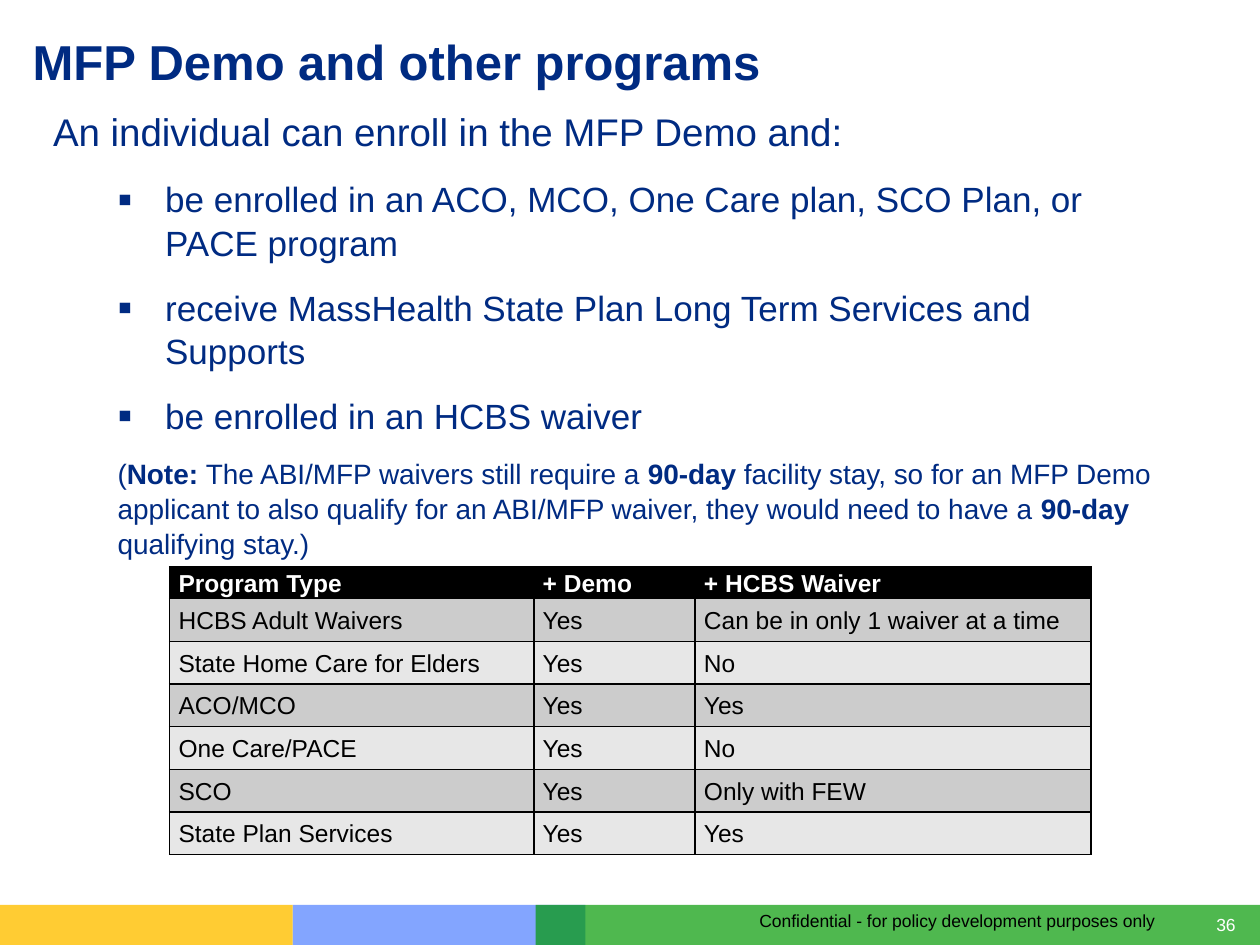
from dataclasses import dataclass

from lxml.etree import SubElement
from pptx import Presentation
from pptx.dml.color import RGBColor
from pptx.enum.shapes import MSO_SHAPE
from pptx.enum.text import MSO_ANCHOR, PP_ALIGN
from pptx.oxml.ns import qn
from pptx.slide import Slide
from pptx.util import Cm, Pt

NAVY = RGBColor(0x00, 0x2B, 0x82)
BLACK = RGBColor(0x00, 0x00, 0x00)
WHITE = RGBColor(0xFF, 0xFF, 0xFF)
DARK_BAND = RGBColor(0xCC, 0xCC, 0xCC)
LIGHT_BAND = RGBColor(0xE7, 0xE7, 0xE7)
BLUE = RGBColor(0x5E, 0x8B, 0xFF)
YELLOW = RGBColor(0xFF, 0xC0, 0x00)
GREEN = RGBColor(0x00, 0x99, 0x00)

BULLETS = [
    "be\u00a0enrolled in an ACO, MCO, One Care plan, SCO Plan, or PACE program".replace("\u00a0", " "),
    "receive MassHealth State Plan Long Term Services and Supports",
    "be enrolled in an HCBS waiver",
]
NOTE = [
    ("(", False),
    ("Note: ", True),
    ("The ABI/MFP waivers still require a ", False),
    ("90-day ", True),
    ("facility stay, so for an MFP Demo applicant to also qualify for an "
     "ABI/MFP waiver, they would need to have a ", False),
    ("90-day", True),
    (" qualifying stay.)", False),
]
PROGRAMS = [
    ("Program Type", "+ Demo", "+ HCBS Waiver"),
    ("HCBS Adult Waivers", "Yes", "Can be in only 1 waiver at a time"),
    ("State Home Care for Elders", "Yes", "No"),
    ("ACO/MCO", "Yes", "Yes"),
    ("One Care/PACE", "Yes", "No"),
    ("SCO", "Yes", "Only with FEW"),
    ("State Plan Services", "Yes", "Yes"),
]


@dataclass
class SlideBuilder:
    """Holds the style and the current slide, and adds each kind of element."""

    slide: Slide
    font_name: str = "Arial"
    body_line_spacing: float = 1.04
    table_line_spacing: float = 1.07

    def set_font(self, paragraph, size, color, bold=None):
        font = paragraph.font
        font.name = self.font_name
        font.size = Pt(size)
        font.color.rgb = color
        font.bold = bold

    def band(self, left, width, color, opacity):
        shape = self.slide.shapes.add_shape(
            MSO_SHAPE.RECTANGLE, Cm(left), Cm(18.24), Cm(width), Cm(0.81))
        shape.shadow.inherit = False
        shape.fill.solid()
        shape.fill.fore_color.rgb = color
        shape.line.fill.background()
        color_element = shape.fill._xPr.find(".//" + qn("a:srgbClr"))
        SubElement(color_element, qn("a:alpha"), val=str(opacity * 1000))

    def text_frame(self, left, top, width, height, margins=(0, 0)):
        shape = self.slide.shapes.add_textbox(Cm(left), Cm(top), Cm(width), Cm(height))
        frame = shape.text_frame
        frame.word_wrap = True
        frame.margin_left = frame.margin_right = Cm(margins[0])
        frame.margin_top = frame.margin_bottom = Cm(margins[1])
        return frame

    def label(self, box, text, size, color, bold=None, margins=(0, 0), align=PP_ALIGN.LEFT):
        paragraph = self.text_frame(*box, margins).paragraphs[0]
        paragraph.text = text
        paragraph.alignment = align
        self.set_font(paragraph, size, color, bold)

    def body_paragraph(self, paragraph, runs, size, left=0, hanging=0, before=True):
        for text, bold in runs:
            run = paragraph.add_run()
            run.text = text
            if bold:
                run.font.bold = True
        paragraph.line_spacing = self.body_line_spacing
        paragraph.space_before = Pt(size * 0.3 if before else 0)
        paragraph.space_after = Pt(size * 0.3)
        properties = paragraph._p.get_or_add_pPr()
        properties.set("marL", str(Cm(left)))
        properties.set("indent", str(-Cm(hanging)))
        if hanging:
            bullet_color = SubElement(properties, qn("a:buClr"))
            SubElement(bullet_color, qn("a:srgbClr"), val=str(NAVY))
            SubElement(properties, qn("a:buSzPct"), val="120000")
            SubElement(properties, qn("a:buFont"), typeface=self.font_name)
            SubElement(properties, qn("a:buChar"), char="▪")
        self.set_font(paragraph, size, NAVY)

    def body(self, box, heading, bullets, note):
        frame = self.text_frame(*box)
        self.body_paragraph(frame.paragraphs[0], [(heading, False)], 22, before=False)
        for bullet in bullets:
            self.body_paragraph(
                frame.add_paragraph(), [(bullet, False)], 20, left=2.26, hanging=0.96)
        self.body_paragraph(frame.add_paragraph(), note, 16, left=1.3)

    def cell(self, cell, text, fill, color, bold):
        cell.fill.solid()
        cell.fill.fore_color.rgb = fill
        cell.vertical_anchor = MSO_ANCHOR.MIDDLE
        cell.margin_left = cell.margin_right = Cm(0.18)
        cell.margin_top = cell.margin_bottom = 0
        paragraph = cell.text_frame.paragraphs[0]
        paragraph.text = text
        paragraph.line_spacing = self.table_line_spacing
        self.set_font(paragraph, 14, color, bold)
        properties = cell._tc.get_or_add_tcPr()
        for position, side in enumerate(("lnL", "lnR", "lnT", "lnB")):
            border = SubElement(properties, qn("a:" + side), w=str(Pt(1)))
            line_fill = SubElement(border, qn("a:solidFill"))
            SubElement(line_fill, qn("a:srgbClr"), val=str(BLACK))
            properties.insert(position, border)

    def table(self, left, top, widths, heights, rows):
        table = self.slide.shapes.add_table(
            len(rows), len(widths), Cm(left), Cm(top),
            Cm(sum(widths)), Cm(sum(heights))).table
        for column, width in zip(table.columns, widths):
            column.width = Cm(width)
        for index, (row, height, texts) in enumerate(zip(table.rows, heights, rows)):
            row.height = Cm(height)
            header = index == 0
            fill = BLACK if header else DARK_BAND if index % 2 else LIGHT_BAND
            for cell, text in zip(row.cells, texts):
                self.cell(cell, text, fill, WHITE if header else BLACK, header)


def main():
    presentation = Presentation()
    presentation.slide_width = Cm(25.4)
    presentation.slide_height = Cm(19.05)
    builder = SlideBuilder(presentation.slides.add_slide(presentation.slide_layouts[6]))

    builder.band(5.9, 5.9, BLUE, 77)
    builder.band(0, 5.9, YELLOW, 80)
    builder.band(10.8, 14.6, GREEN, 69)
    builder.label((23.91, 18.42, 1, 0.43), "36", 10, WHITE, align=PP_ALIGN.RIGHT)
    builder.label((15.06, 18.21, 9, 0.69),
                  "Confidential - for policy development purposes only",
                  10, BLACK, margins=(0.25, 0.13))
    builder.label((0.66, 0.64, 24.13, 1.19), "MFP Demo and other programs", 28, NAVY, True)
    builder.body((1.07, 2.14, 22.73, 10.6),
                 "An individual can enroll in the MFP Demo and:", BULLETS, NOTE)
    builder.table(3.42, 11.43, [7.34, 3.25, 7.98], [0.64] + [0.86] * 6, PROGRAMS)
    presentation.save("out.pptx")


if __name__ == "__main__":
    main()
